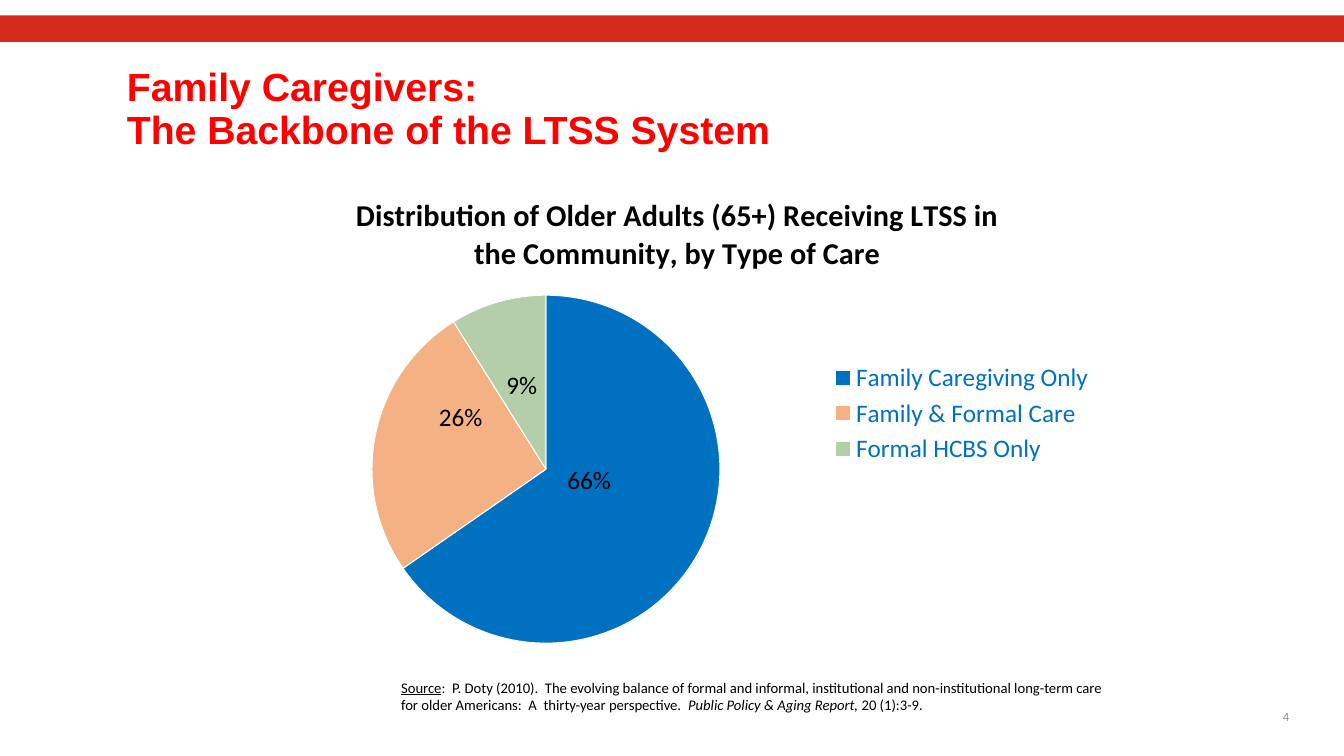
from dataclasses import dataclass

from lxml import etree
from pptx import Presentation
from pptx.chart.data import CategoryChartData
from pptx.dml.color import RGBColor
from pptx.enum.chart import XL_CHART_TYPE, XL_LABEL_POSITION, XL_LEGEND_POSITION
from pptx.enum.shapes import MSO_SHAPE
from pptx.enum.text import MSO_ANCHOR, PP_ALIGN
from pptx.oxml.ns import qn
from pptx.util import Cm, Pt

PIE = XL_CHART_TYPE.PIE
LABEL_CENTER = XL_LABEL_POSITION.CENTER
LEGEND_RIGHT = XL_LEGEND_POSITION.RIGHT
RECTANGLE = MSO_SHAPE.RECTANGLE
TOP = MSO_ANCHOR.TOP
MIDDLE = MSO_ANCHOR.MIDDLE
LEFT = PP_ALIGN.LEFT
RIGHT = PP_ALIGN.RIGHT

SLIDE_WIDTH, SLIDE_HEIGHT = 33.87, 19.05
PERCENT = "0%"


@dataclass(frozen=True)
class Theme:
    heading_font: str = "Arial"
    body_font: str = "Calibri"
    bar: str = "D52B1E"
    heading: str = "FF0000"
    text: str = "000000"
    muted: str = "8C8C8C"
    legend: str = "0070C0"
    slice_line: str = "FFFFFF"
    slices: tuple = ("0070C0", "F4B183", "B5CEAA")
    heading_size: float = 28
    chart_title_size: float = 21.6
    chart_size: float = 18
    source_size: float = 10.5
    number_size: float = 9


class SlideBuilder:
    def __init__(self, slide, theme):
        self.slide = slide
        self.theme = theme

    def style_font(self, font, size, color, **formats):
        values = {"name": self.theme.body_font, "size": Pt(size), "bold": False, **formats}
        for name, value in values.items():
            setattr(font, name, value)
        font.color.rgb = RGBColor.from_string(color)

    def bar(self, box, color):
        shape = self.slide.shapes.add_shape(RECTANGLE, *map(Cm, box))
        shape.shadow.inherit = False
        shape.fill.solid()
        shape.fill.fore_color.rgb = RGBColor.from_string(color)
        shape.line.fill.background()

    def text(self, box, lines, size, color, anchor=TOP, align=LEFT, spacing=1.0, **formats):
        frame = self.slide.shapes.add_textbox(*map(Cm, box)).text_frame
        frame.word_wrap = True
        frame.vertical_anchor = anchor
        paragraph = frame.paragraphs[0]
        paragraph.alignment = align
        paragraph.line_spacing = spacing
        for index, runs in enumerate(lines):
            if index:
                paragraph.add_line_break()
            for words, run_formats in runs:
                run = paragraph.add_run()
                run.text = words
                self.style_font(run.font, size, color, **{**formats, **run_formats})

    def manual_layout(self, **values):
        layout = etree.Element(qn("c:layout"))
        manual = etree.SubElement(layout, qn("c:manualLayout"))
        for name, value in values.items():
            etree.SubElement(manual, qn(f"c:{name}")).set("val", str(value))
        return layout

    def pie(self, box, title, shares, label_offsets):
        theme = self.theme
        data = CategoryChartData(number_format=PERCENT)
        data.categories = list(shares)
        data.add_series("Series 1", list(shares.values()))
        chart = self.slide.shapes.add_chart(PIE, *map(Cm, box), data).chart
        self.style_font(chart.font, theme.chart_size, theme.legend)
        self.chart_title(chart, title)
        self.legend(chart)
        plot = chart.plots[0]
        plot.vary_by_categories = True
        self.place_plot(plot)
        series = plot.series[0]
        self.labels(series, label_offsets)
        for index, color in enumerate(theme.slices):
            slice_format = series.points[index].format
            slice_format.fill.solid()
            slice_format.fill.fore_color.rgb = RGBColor.from_string(color)
            slice_format.line.color.rgb = RGBColor.from_string(theme.slice_line)
            slice_format.line.width = Pt(0.75)

    def chart_title(self, chart, title):
        chart.has_title = True
        frame = chart.chart_title.text_frame
        frame.text = title
        font = frame.paragraphs[0].runs[0].font
        self.style_font(font, self.theme.chart_title_size, self.theme.text, bold=True)
        chart.chart_title.include_in_layout = False

    def legend(self, chart):
        chart.has_legend = True
        legend = chart.legend
        legend.position = LEGEND_RIGHT
        legend.include_in_layout = False
        self.style_font(legend.font, self.theme.chart_size, self.theme.legend)
        layout = self.manual_layout(xMode="edge", yMode="edge", x=0.68, y=0.38, w=0.31, h=0.23)
        legend._element.find(qn("c:legendPos")).addnext(layout)

    def place_plot(self, plot):
        area = plot._element.getparent()
        for old_layout in area.findall(qn("c:layout")):
            area.remove(old_layout)
        area.insert(0, self.manual_layout(
            layoutTarget="inner", xMode="edge", yMode="edge", x=0.14, y=0.25, w=0.41, h=0.72))

    def labels(self, series, offsets):
        labels = series.data_labels
        labels.show_value = True
        labels.show_percentage = False
        labels.number_format = PERCENT
        labels.number_format_is_linked = False
        labels.position = LABEL_CENTER
        self.style_font(labels.font, self.theme.chart_size, self.theme.text)
        for index, (x, y) in offsets.items():
            label = series.points[index].data_label
            self.style_font(label.font, self.theme.chart_size, self.theme.text)
            label.position = LABEL_CENTER
            element = labels._element.findall(qn("c:dLbl"))[index]
            layout = self.manual_layout(x=x, y=y)
            element.find(qn("c:idx")).addnext(layout)
            number_format = etree.Element(qn("c:numFmt"), formatCode=PERCENT, sourceLinked="0")
            layout.addnext(number_format)


def main():
    theme = Theme()
    presentation = Presentation()
    presentation.slide_width = Cm(SLIDE_WIDTH)
    presentation.slide_height = Cm(SLIDE_HEIGHT)
    slide = presentation.slides.add_slide(presentation.slide_layouts[6])
    builder = SlideBuilder(slide, theme)

    builder.bar((0, 0.39, SLIDE_WIDTH, 0.67), theme.bar)
    builder.text((24.84, 17.55, 7.9, 1.02), [[("4", {})]],
                 theme.number_size, theme.muted, MIDDLE, RIGHT)
    builder.text(
        (2.95, 1.19, 25.37, 3.18),
        [[("Family Caregivers: ", {})], [("The Backbone of the LTSS System", {})]],
        theme.heading_size, theme.heading, MIDDLE, spacing=0.9,
        name=theme.heading_font, bold=True)
    builder.pie(
        (6.38, 4.37, 21.39, 12.22),
        "Distribution of Older Adults (65+) Receiving LTSS in the Community, by Type of Care",
        {"Family Caregiving Only": 0.66, "Family & Formal Care": 0.26, "Formal HCBS Only": 0.09},
        {0: (-0.04, -0.06), 1: (0, -0.07)})
    builder.text(
        (9.86, 16.97, 18.47, 1.14),
        [[("Source", {"underline": True}),
          (":  P. Doty (2010).  The evolving balance of formal and informal, institutional and "
           "non-institutional long-term care for older Americans:  A  thirty-year perspective.  ", {}),
          ("Public Policy & Aging Report,", {"italic": True}),
          (" 20 (1):3-9.", {})]],
        theme.source_size, theme.text)
    presentation.save("out.pptx")


if __name__ == "__main__":
    main()
